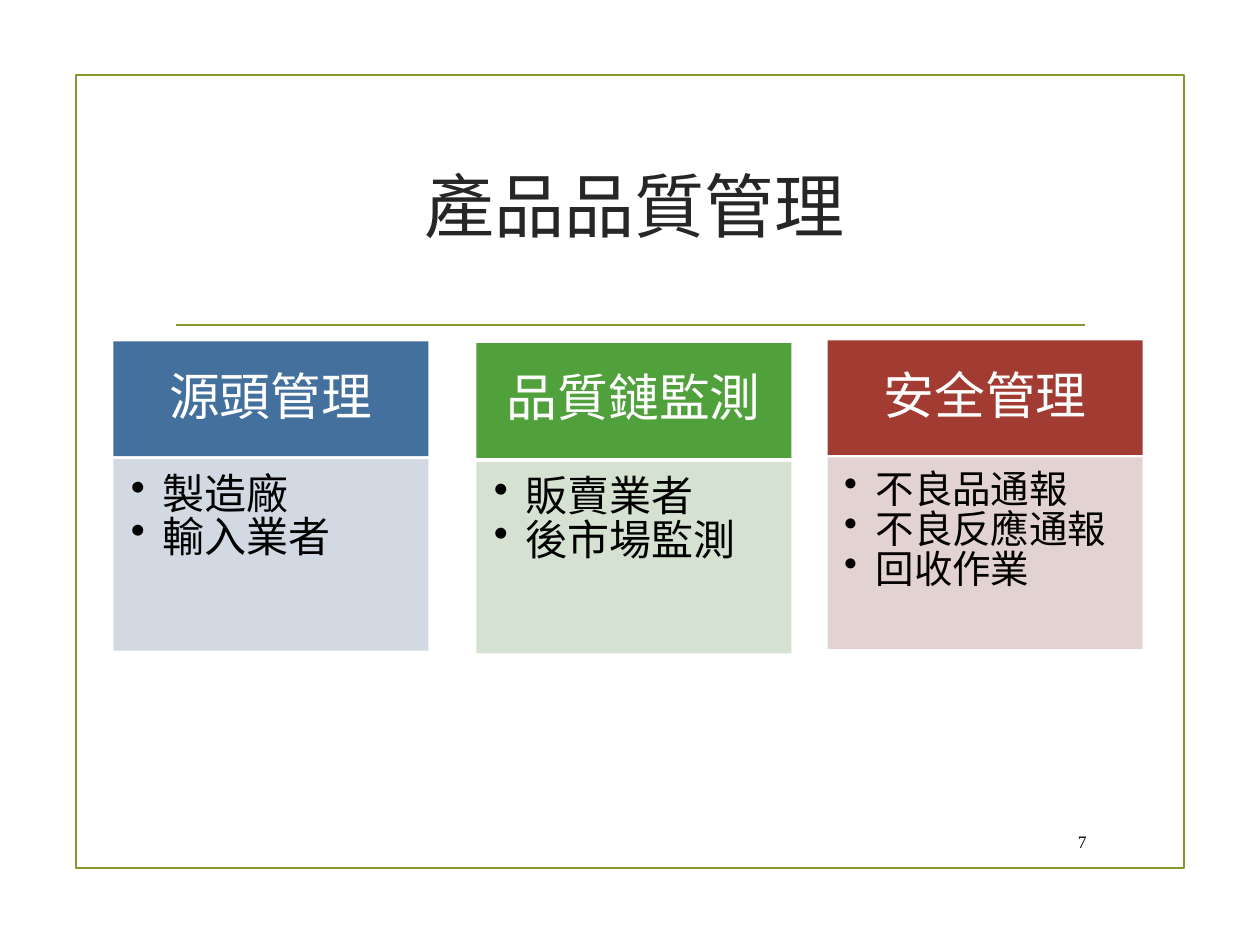
from lxml import etree
from pptx import Presentation
from pptx import util as u
from pptx.dml.color import RGBColor
from pptx.enum import shapes, text
from pptx.oxml.ns import qn

OLIVE = RGBColor(0x83, 0x99, 0x2A)
INK = RGBColor(0x26, 0x26, 0x26)
BLACK = RGBColor(0, 0, 0)
WHITE = RGBColor(255, 255, 255)
BLUE = RGBColor(0x44, 0x70, 0x9D)
MIST = RGBColor(0xCF, 0xD5, 0xDF)
GREEN = RGBColor(0x50, 0xA0, 0x3B)
SAGE = RGBColor(0xD1, 0xDF, 0xCE)
RED = RGBColor(0xA2, 0x3C, 0x33)
ROSE = RGBColor(0xE0, 0xCE, 0xCE)
SANS = "Noto Sans CJK SC"
SERIF = "Times New Roman"
WIDTH, HEAD, BODY = 180, 65.5, 109.5

# left, top, gap under head, title, head fill, body fill, size, insets, items
CARDS = [
    (64.8, 195.1, 1.7, "源頭管理", BLUE, MIST, 24, (10, 10, 13.5, 15),
     ["製造廠", "輸入業者"]),
    (272.2, 196.1, 2.3, "品質鏈監測", GREEN, SAGE, 24, (10, 10, 13.5, 15),
     ["販賣業者", "後市場監測"]),
    (473, 194.5, 1.3, "安全管理", RED, ROSE, 22, (9.4, 9.4, 12.5, 14),
     ["不良品通報", "不良反應通報", "回收作業"]),
]


def bullet(para):
    props = para._p.get_or_add_pPr()
    props.set("marL", str(u.Pt(18)))
    props.set("indent", str(-u.Pt(18)))
    etree.SubElement(props, qn("a:buChar")).set("char", "•")


def write(shape, lines, size, color, font=SANS, align=text.PP_ALIGN.CENTER,
          anchor=text.MSO_ANCHOR.MIDDLE, inset=(7.2, 3.6, 7.2, 3.6),
          space=1, after=0, dots=False):
    frame = shape.text_frame
    frame.word_wrap = True
    frame.vertical_anchor = anchor
    (frame.margin_left, frame.margin_top,
     frame.margin_right, frame.margin_bottom) = map(u.Pt, inset)
    for i, line in enumerate(lines):
        para = frame.paragraphs[0] if i == 0 else frame.add_paragraph()
        para.alignment = align
        para.line_spacing = space
        para.space_after = u.Pt(after)
        if dots:
            bullet(para)
        run = para.add_run()
        run.text = line
        run.font.size = u.Pt(size)
        run.font.color.rgb = color
        run.font.name = font
        east = etree.SubElement(run._r.get_or_add_rPr(), qn("a:ea"))
        east.set("typeface", font)


def rect(slide, box, fill=None, line=None, alpha=None):
    shape = slide.shapes.add_shape(shapes.MSO_SHAPE.RECTANGLE, *map(u.Pt, box))
    shape.shadow.inherit = False
    if fill is None:
        shape.fill.background()
    else:
        shape.fill.solid()
        shape.fill.fore_color.rgb = fill
    if alpha:
        tint = shape._element.spPr.find(".//" + qn("a:srgbClr"))
        etree.SubElement(tint, qn("a:alpha")).set("val", str(alpha * 1000))
    if line is None:
        shape.line.fill.background()
    else:
        shape.line.color.rgb = line
        shape.line.width = u.Pt(1.25)
    return shape


def rule(slide, left, right, y):
    line = slide.shapes.add_connector(
        shapes.MSO_CONNECTOR.STRAIGHT, *map(u.Pt, (left, y, right, y)))
    line.line.color.rgb = OLIVE
    line.line.width = u.Pt(1.25)
    etree.SubElement(line._element.spPr, qn("a:effectLst"))


def label(slide, box, line, **style):
    write(slide.shapes.add_textbox(*map(u.Pt, box)), [line], **style)


def card(slide, left, top, gap, title, dark, pale, size, inset, items):
    head = rect(slide, (left, top, WIDTH, HEAD), dark)
    write(head, [title], 29, WHITE, space=0.9, inset=(16.5, 9.4, 16.5, 9.4))
    body = rect(slide, (left, top + HEAD + gap, WIDTH, BODY), pale, alpha=90)
    write(body, items, size, BLACK, align=text.PP_ALIGN.LEFT,
          anchor=text.MSO_ANCHOR.TOP, inset=inset, space=0.81, after=1.5,
          dots=True)


def main():
    deck = Presentation()
    deck.slide_width, deck.slide_height = u.Pt(720), u.Pt(540)
    slide = deck.slides.add_slide(deck.slide_layouts[6])

    # Frame, title and rule
    rect(slide, (43.6, 42.8, 633, 453.3), line=OLIVE)
    rule(slide, 100.5, 620, 185.6)
    label(slide, (65, 72, 595.5, 90), "產品品質管理", size=40, color=INK)

    # Three management cards
    for item in CARDS:
        card(slide, *item)

    # Page number
    label(slide, (597, 469.5, 31, 22.5), "7", size=10, color=BLACK,
          font=SERIF, align=text.PP_ALIGN.RIGHT)
    deck.save("out.pptx")


if __name__ == "__main__":
    main()
